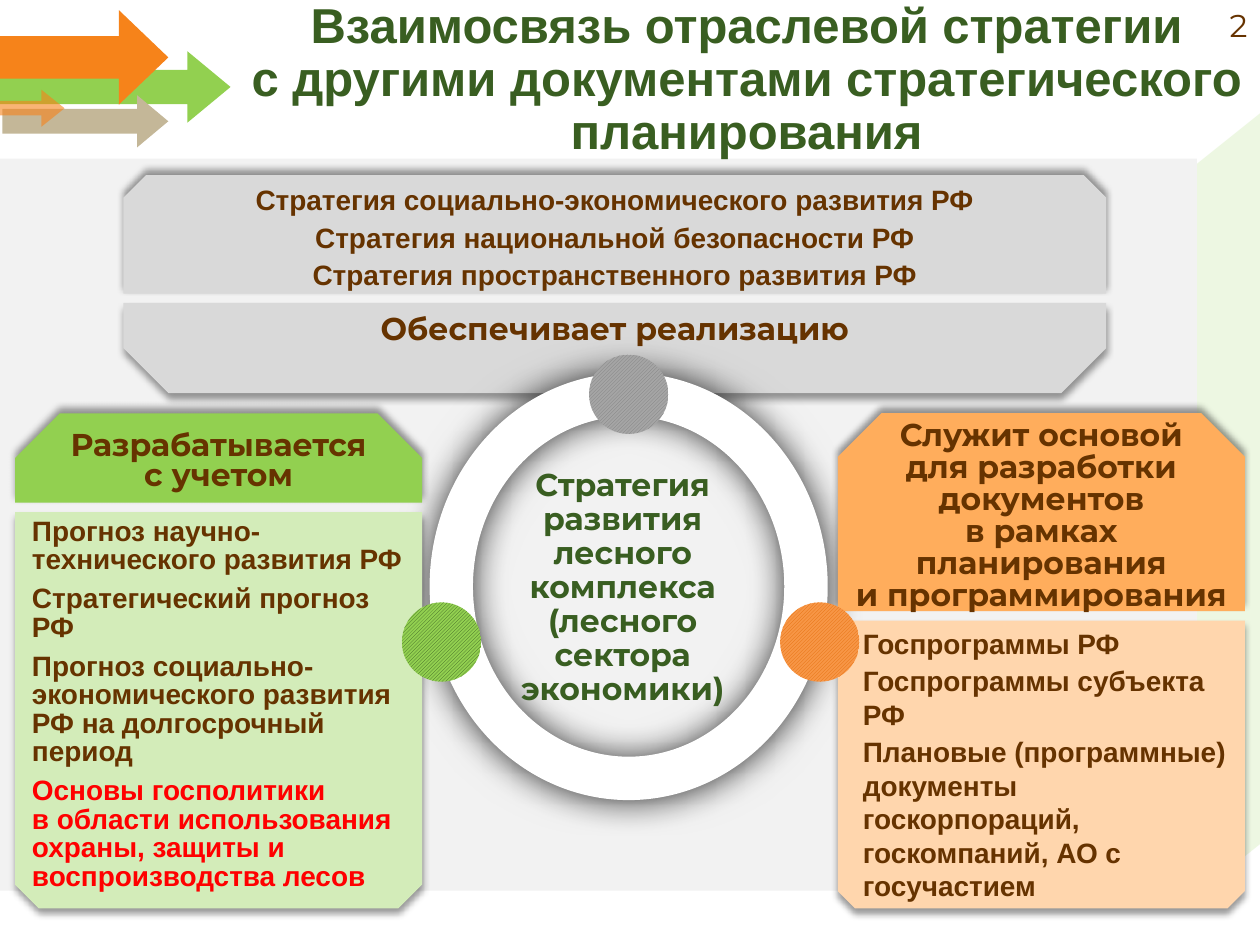
import copy
from dataclasses import dataclass

import pptx
import pptx.util
import pptx.dml.color
import pptx.enum.dml
import pptx.enum.shapes
import pptx.enum.text
import pptx.oxml
import pptx.oxml.ns

SHAPE = pptx.enum.shapes.MSO_SHAPE
ALIGN = pptx.enum.text.PP_ALIGN
ANCHOR = pptx.enum.text.MSO_ANCHOR
QN = pptx.oxml.ns.qn
CELL = pptx.util.Inches(0.1)  # grid of 100 columns by 75 rows
COLS, ROWS = 100, 75
GAP = 0.75  # rows between the parts of a block
UP, DOWN = 270, 90  # shadow directions


@dataclass(frozen=True)
class Theme:
    sans: str = "Arial"
    display: str = "Montserrat"
    title_size: int = 28
    head_size: int = 18
    body_size: int = 16
    brown: str = "663300"
    forest: str = "395E21"
    red: str = "FF0000"
    white: str = "FFFFFF"
    backdrop: str = "F2F2F2"
    gray: str = "D9D9D9"
    green: str = "92D050"
    pale_green: str = "D3ECB9"
    orange: str = "FFAD5C"
    pale_orange: str = "FFD6AD"
    arrow_orange: str = "F6831A"
    sand: str = "C4B798"
    gray_dot: tuple = ("808080", "A5A5A5")
    green_dot: tuple = ("395E21", "92D050")
    orange_dot: tuple = ("E36C0A", "F79646")


T = Theme()


@dataclass(frozen=True)
class Box:
    """A rectangle in grid columns and rows."""
    x: float
    y: float
    w: float
    h: float

    def emu(self):
        return [round(v * CELL) for v in (self.x, self.y, self.w, self.h)]

    def share(self, x, y, w, h):
        """Sub-box given as shares of this one."""
        return Box(self.x + x * self.w, self.y + y * self.h, w * self.w, h * self.h)

    def stack(self, rows):
        """Top box of the given height, and the rest below one gap."""
        return (Box(self.x, self.y, self.w, rows),
                Box(self.x, self.y + rows + GAP, self.w, self.h - rows - GAP))


def rgb(color):
    return pptx.dml.color.RGBColor.from_string(color)


def paint(sp, color, alpha=None):
    sp.shadow.inherit = False
    sp.line.fill.background()
    sp.fill.solid()
    sp.fill.fore_color.rgb = rgb(color)
    if alpha:
        clr = sp._element.spPr.find(QN("a:solidFill"))[0]
        clr.append(pptx.oxml.parse_xml(
            f'<a:alpha {pptx.oxml.ns.nsdecls("a")} val="{alpha * 1000}"/>'))


def add_shadow(sp, direction=0, alpha=40, blur=4, dist=3):
    pt = pptx.util.Pt
    sp._element.spPr.find(QN("a:effectLst")).append(pptx.oxml.parse_xml(
        f'<a:outerShdw {pptx.oxml.ns.nsdecls("a")} blurRad="{pt(blur)}" dist="{pt(dist)}" '
        f'dir="{direction * 60000}" algn="ctr" rotWithShape="0"><a:srgbClr val="000000">'
        f'<a:alpha val="{alpha * 1000}"/></a:srgbClr></a:outerShdw>'))


def add_shape(slide, kind, box, color, adj=(), alpha=None):
    sp = slide.shapes.add_shape(kind, *box.emu())
    for i, value in enumerate(adj):
        sp.adjustments[i] = value
    paint(sp, color, alpha)
    return sp


def add_plate(slide, box, color, direction, top=0, bottom=0):
    """Shadowed plate with its top or bottom corners snipped."""
    sp = add_shape(slide, SHAPE.SNIP_2_SAME_RECTANGLE, box, color, (top, bottom))
    add_shadow(sp, direction)
    return sp


def add_textbox(slide, box):
    return slide.shapes.add_textbox(*box.emu())


def write(sp, lines, *, size=T.head_size, font=T.display, color=T.brown, bold=True,
          align=ALIGN.CENTER, anchor=ANCHOR.TOP, spacing=1.0, before=0,
          insets=(0.1, 0.05, 0.1, 0.05), indent=0, last_color=None):
    """One paragraph per line; last_color recolours the final one."""
    tf = sp.text_frame
    tf.word_wrap = True
    tf.vertical_anchor = anchor
    (tf.margin_left, tf.margin_top,
     tf.margin_right, tf.margin_bottom) = map(pptx.util.Inches, insets)
    for i, line in enumerate(lines):
        p = tf.add_paragraph() if i else tf.paragraphs[0]
        p.text = line
        p.alignment = align
        p.line_spacing = spacing
        p.space_before = pptx.util.Pt(before if i else 0)
        if indent:
            p._p.get_or_add_pPr().set("marL", str(pptx.util.Inches(indent)))
        last = i == len(lines) - 1
        for r in p.runs:
            r.font.name, r.font.size, r.font.bold = font, pptx.util.Pt(size), bold
            r.font.color.rgb = rgb(last_color if last and last_color else color)
        for br in p._p.findall(QN("a:br")):
            br.insert(0, copy.deepcopy(p.runs[0]._r.rPr))


def add_backdrop(slide, box, side):
    right = box.x + box.w
    points = [(right, box.y), (COLS, 8.8), (COLS, 66.7), (right, box.y + box.h)]
    fb = slide.shapes.build_freeform(*points[0], scale=CELL)
    fb.add_line_segments(points[1:], close=True)
    paint(fb.convert_to_shape(), side, 16)
    add_shape(slide, SHAPE.RECTANGLE, box, T.backdrop)


def add_arrows(slide, box):
    for shares, color, adj, alpha in (
            ((0, 0.3, 1, 0.52), T.green, (0.479, 0.604), None),
            ((0, 0, 0.73, 0.69), T.arrow_orange, (0.447, 0.523), None),
            ((0.01, 0.62, 0.72, 0.38), T.sand, (0.479, 0.597), None),
            ((0, 0.58, 0.28, 0.27), T.arrow_orange, (0.389, 0.625), 60)):
        add_shape(slide, SHAPE.RIGHT_ARROW, box.share(*shares), color, adj, alpha)


def add_header(slide, box):
    write(add_textbox(slide, box),
          ["Взаимосвязь отраслевой стратегии\nс другими документами стратегического планирования"],
          size=T.title_size, font=T.sans, color=T.forest, anchor=ANCHOR.MIDDLE, spacing=0.9)
    write(add_textbox(slide, box.share(0.71, 0, 0.29, 0.26)), ["2"],
          bold=False, align=ALIGN.RIGHT)


def add_goals(slide, box):
    top, bottom = box.stack(9.4)
    write(add_plate(slide, top, T.gray, UP, top=0.19),
          ["Стратегия социально-экономического развития РФ",
           "Стратегия национальной безопасности РФ",
           "Стратегия пространственного развития РФ"],
          size=T.body_size, font=T.sans, anchor=ANCHOR.MIDDLE, before=2,
          insets=(0.1, 0, 0.1, 0.05))
    write(add_plate(slide, bottom, T.gray, DOWN, bottom=0.5), ["Обеспечивает реализацию"])


def add_ring(slide, box):
    ring = add_shape(slide, SHAPE.DONUT, box, T.white, (0.109,))
    add_shadow(ring, alpha=80, blur=20, dist=0)
    write(add_textbox(slide, box.share(0.1, 0.21, 0.77, 0.59)),
          ["Стратегия\nразвития\nлесного", "комплекса", "(лесного сектора", "экономики)"],
          color=T.forest, spacing=0.9)


def add_dots(slide, box, size=6.3):
    for x, y, (fore, back) in ((0.5, 0.05, T.gray_dot), (0.03, 0.63, T.green_dot),
                               (0.98, 0.63, T.orange_dot)):
        center = box.share(x, y, 0, 0)
        dot = add_shape(slide, SHAPE.OVAL,
                        Box(center.x - size / 2, center.y - size / 2, size, size), back)
        dot.fill.patterned()
        dot.fill.pattern = pptx.enum.dml.MSO_PATTERN.LIGHT_UPWARD_DIAGONAL
        dot.fill.fore_color.rgb, dot.fill.back_color.rgb = rgb(fore), rgb(back)


def add_panel(slide, box, head_rows, snip, colors, head, head_spacing, items, **body_format):
    top, bottom = box.stack(head_rows)
    add_plate(slide, top, colors[0], UP, top=snip)
    write(add_textbox(slide, Box(top.x, top.y, top.w, top.h + GAP)), head,
          anchor=ANCHOR.MIDDLE, spacing=head_spacing, insets=(0, 0, 0, 0))
    write(add_plate(slide, bottom, colors[1], DOWN, bottom=0.06), items,
          size=T.body_size, font=T.sans, align=ALIGN.LEFT,
          insets=(0.04, 0.05, 0.04, 0.05), **body_format)


def main():
    prs = pptx.Presentation()
    prs.slide_width, prs.slide_height = COLS * CELL, ROWS * CELL
    slide = prs.slides.add_slide(prs.slide_layouts[6])
    ring = Box(34.1, 29.6, 31.6, 33.9)
    left = Box(1.2, 32.8, 32.3, 39.3)
    right = Box(COLS - left.x - left.w, left.y, left.w, left.h)

    add_backdrop(slide, Box(0, 12.6, 95, 58.1), T.green)
    add_arrows(slide, Box(0, 0.8, 18.3, 10.9))
    add_header(slide, Box(18.5, 0, 81.5, 12.8))
    add_goals(slide, Box(9.8, 13.9, 78, 17.3))
    add_ring(slide, ring)
    add_panel(slide, left, 7.1, 0.5, (T.green, T.pale_green),
              ["Разрабатывается", "с учетом"], 0.8,
              ["Прогноз научно-технического развития РФ",
               "Стратегический прогноз РФ",
               "Прогноз социально-экономического развития РФ на долгосрочный период",
               "Основы госполитики\nв области использования охраны, защиты и воспроизводства лесов"],
              spacing=0.85, before=6, last_color=T.red)
    add_panel(slide, right, 15.7, 0.22, (T.orange, T.pale_orange),
              ["Служит основой", "для разработки документов\nв рамках планирования",
               "и программирования"], 0.85,
              ["Госпрограммы РФ", "Госпрограммы субъекта РФ",
               "Плановые (программные) документы госкорпораций, госкомпаний, АО с госучастием"],
              before=2, indent=0.09)
    add_dots(slide, ring)
    prs.save("out.pptx")


if __name__ == "__main__":
    main()
